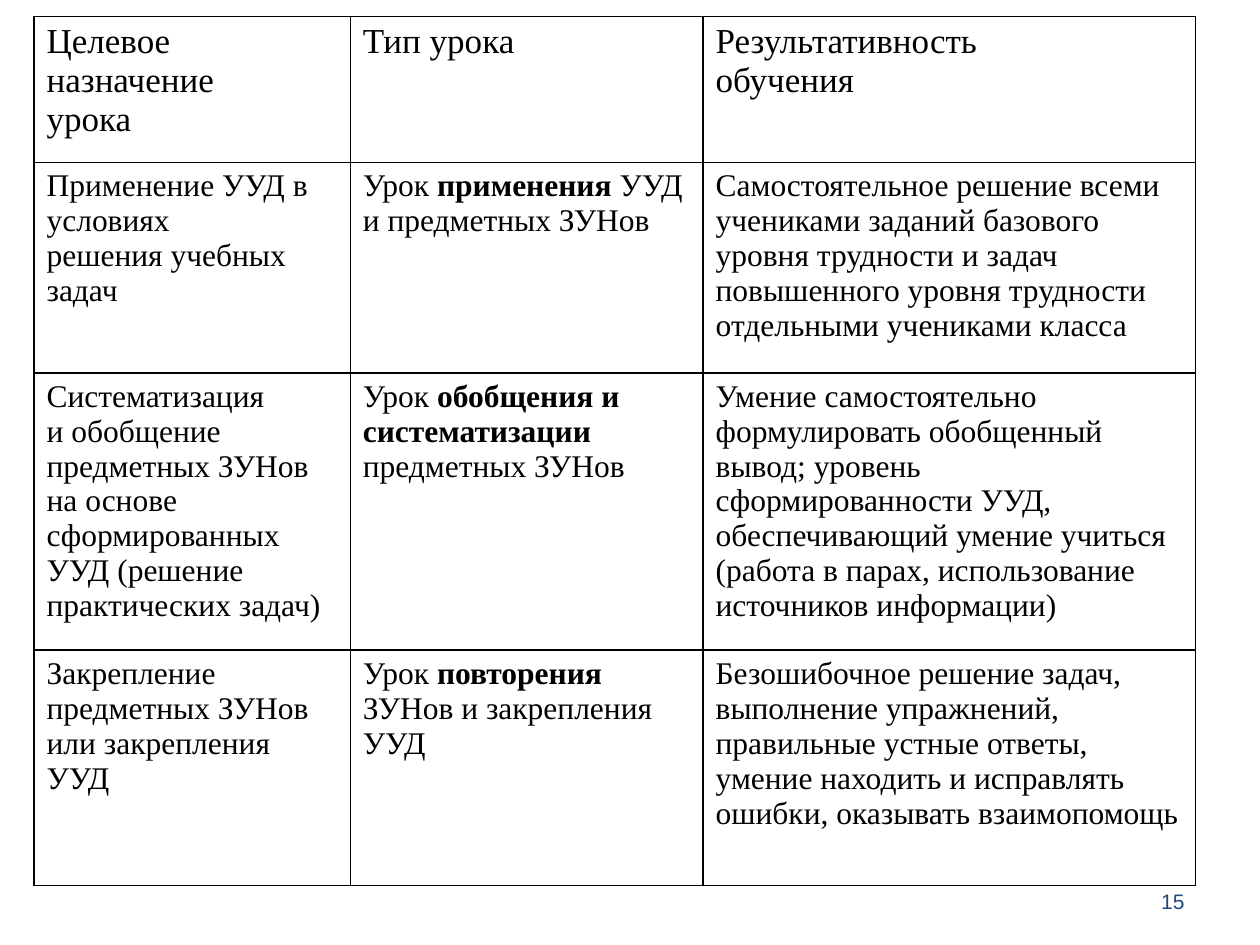
from dataclasses import dataclass

from lxml.etree import SubElement
from pptx import Presentation
from pptx.dml.color import RGBColor as Color
from pptx.enum.text import MSO_ANCHOR as Anchor, PP_ALIGN as Align
from pptx.oxml.ns import qn
from pptx.util import Inches, Pt


@dataclass(frozen=True)
class Theme:
    ink: str = "000000"
    number_ink: str = "1F497D"
    body_font: str = "Times New Roman"
    number_font: str = "Arial"
    header_size: int = 20
    body_size: int = 18
    number_size: int = 12
    border_width: int = 1


THEME = Theme()
COLUMN_WIDTHS = [2.51, 2.8, 3.91]
ROW_HEIGHTS = [1.16, 1.67, 2.2, 1.87]

# Each cell is a list of paragraphs; a paragraph alternates plain and bold runs
LESSON_ROWS = [
    [
        [["Целевое назначение"], ["урока"]],
        [["Тип урока"]],
        [["Результативность"], ["обучения"]],
    ],
    [
        [["Применение УУД в условиях"], ["решения учебных"], ["задач"]],
        [["Урок ", "применения ", "УУД и предметных ЗУНов"]],
        [["Самостоятельное решение всеми учениками заданий базового уровня "
          "трудности и задач"],
         ["повышенного уровня трудности отдельными учениками класса"]],
    ],
    [
        [["Систематизация"],
         ["и обобщение предметных ЗУНов на основе сформированных УУД "
          "(решение практических задач)"]],
        [["Урок ", "обобщения и"],
         ["", "систематизации", " предметных ЗУНов"]],
        [["Умение самостоятельно формулировать обобщенный вывод; уровень "
          "сформированности УУД, обеспечивающий умение учиться (работа в "
          "парах, использование источников информации)"]],
    ],
    [
        [["Закрепление предметных ЗУНов"], ["или закрепления УУД"]],
        [["Урок ", "повторения ", "ЗУНов и закрепления УУД"]],
        [["Безошибочное решение задач, выполнение упражнений, правильные "
          "устные ответы,"],
         ["умение находить и исправлять ошибки, оказывать взаимопомощь"]],
    ],
]


def add_span(para, text, font, size, color, bold=False):
    span = para.add_run()
    span.text = text
    span.font.name = font
    span.font.size = Pt(size)
    span.font.bold = bold
    span.font.color.rgb = Color.from_string(color)


def set_borders(cell):
    properties = cell._tc.get_or_add_tcPr()
    for side in ("a:lnL", "a:lnR", "a:lnT", "a:lnB"):
        line = SubElement(properties, qn(side), w=str(Pt(THEME.border_width)))
        fill = SubElement(line, qn("a:solidFill"))
        SubElement(fill, qn("a:srgbClr"), val=THEME.ink)


def fill_cell(cell, paragraphs, size):
    cell.margin_left = cell.margin_right = Inches(0.1)
    cell.margin_top = cell.margin_bottom = Inches(0.05)
    cell.vertical_anchor = Anchor.TOP
    set_borders(cell)
    cell.fill.background()
    frame = cell.text_frame
    for index, texts in enumerate(paragraphs):
        para = frame.add_paragraph() if index else frame.paragraphs[0]
        for position, text in enumerate(texts):
            if text:
                add_span(para, text, THEME.body_font, size, THEME.ink,
                         bold=position % 2 == 1)


def add_lesson_table(page, left, top, width, height):
    table = page.shapes.add_table(
        len(ROW_HEIGHTS), len(COLUMN_WIDTHS),
        Inches(left), Inches(top), Inches(width), Inches(height)).table
    table.first_row = table.horz_banding = False
    for column, column_width in zip(table.columns, COLUMN_WIDTHS):
        column.width = Inches(column_width)
    for row, row_height in zip(table.rows, ROW_HEIGHTS):
        row.height = Inches(row_height)
    for row_index, lesson in enumerate(LESSON_ROWS):
        size = THEME.body_size if row_index else THEME.header_size
        for column_index, paragraphs in enumerate(lesson):
            fill_cell(table.cell(row_index, column_index), paragraphs, size)


def add_page_number(page, left, top, width, height):
    box = page.shapes.add_textbox(
        Inches(left), Inches(top), Inches(width), Inches(height))
    frame = box.text_frame
    frame.word_wrap = True
    frame.vertical_anchor = Anchor.MIDDLE
    para = frame.paragraphs[0]
    para.alignment = Align.RIGHT
    add_span(para, "15", THEME.number_font, THEME.number_size,
             THEME.number_ink)


def main():
    deck = Presentation()
    deck.slide_width, deck.slide_height = Inches(10), Inches(7.5)
    page = deck.slides.add_slide(deck.slide_layouts[6])
    add_page_number(page, 7.17, 6.95, 2.33, 0.4)
    add_lesson_table(page, 0.27, 0.13, sum(COLUMN_WIDTHS), sum(ROW_HEIGHTS))
    deck.save("out.pptx")


if __name__ == "__main__":
    main()
